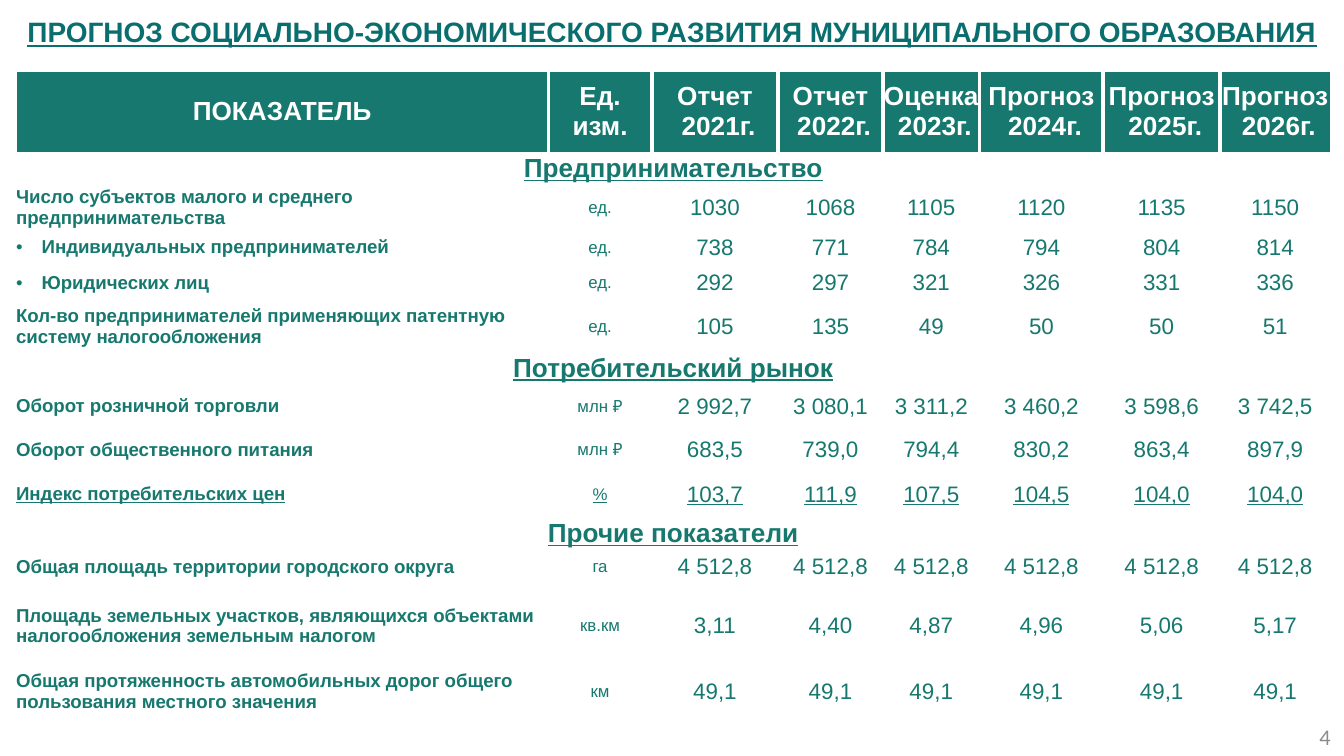
from dataclasses import dataclass

from lxml import etree
from pptx import Presentation, util as u
from pptx.dml.color import RGBColor
from pptx.enum import text as t
from pptx.oxml.ns import qn


@dataclass(frozen=True)
class Theme:
    face: str = "Arial"
    page_face: str = "Calibri"
    teal: str = "16786E"
    deep: str = "0A6E6E"
    white: str = "FFFFFF"
    grey: str = "8C8C8C"
    title: int = 15
    head: int = 14
    label: int = 10
    unit: int = 9
    value: int = 12


TH = Theme()
WIDE = 10
HIGH = WIDE * 9 / 16
PLAIN = "{2D5ABB26-0587-4C30-8999-92F81FD0307C}"  # table style: no style, no grid
MID, LEFT, RIGHT = t.PP_ALIGN.CENTER, t.PP_ALIGN.LEFT, t.PP_ALIGN.RIGHT

COLS = [3.96, 0.77, 0.94, 0.78, 0.72, 0.92, 0.87, 0.82]
HEADS = ["ПОКАЗАТЕЛЬ", "Ед. изм."] + [
    f"{kind}\n {year}г."
    for year, kind in enumerate(["Отчет"] * 2 + ["Оценка"] + ["Прогноз"] * 3, 2021)
]
HEAD_ROW, PART_ROW = 0.6, 0.25

# Each part: heading, then rows of (height, mark, label, unit, values);
# mark "•" is a bulleted row, "_" an underlined one.
PARTS = [
    ("Предпринимательство", [
        (0.3, "", "Число субъектов малого и среднего предпринимательства", "ед.",
         ["1030", "1068", "1105", "1120", "1135", "1150"]),
        (0.25, "•", "Индивидуальных предпринимателей", "ед.",
         ["738", "771", "784", "794", "804", "814"]),
        (0.28, "•", "Юридических лиц", "ед.",
         ["292", "297", "321", "326", "331", "336"]),
        (0.37, "", "Кол-во предпринимателей применяющих патентную систему налогообложения",
         "ед.", ["105", "135", "49", "50", "50", "51"]),
    ]),
    ("Потребительский рынок", [
        (0.32, "", "Оборот розничной торговли", "млн ₽",
         ["2 992,7", "3 080,1", "3 311,2", "3 460,2", "3 598,6", "3 742,5"]),
        (0.33, "", "Оборот общественного питания", "млн ₽",
         ["683,5", "739,0", "794,4", "830,2", "863,4", "897,9"]),
        (0.33, "_", "Индекс потребительских цен", "%",
         ["103,7", "111,9", "107,5", "104,5", "104,0", "104,0"]),
    ]),
    ("Прочие показатели", [
        (0.25, "", "Общая площадь территории городского округа", "га", ["4 512,8"] * 6),
        (0.63, "", "Площадь земельных участков, являющихся объектами "
         "налогообложения земельным налогом", "кв.км",
         ["3,11", "4,40", "4,87", "4,96", "5,06", "5,17"]),
        (0.35, "", "Общая протяженность автомобильных дорог общего пользования "
         "местного значения", "км", ["49,1"] * 6),
    ]),
]


def write(frame, words, size, color, align=MID, face=TH.face, bullet="", **marks):
    """Fill a text frame, one paragraph a line; marks are font attributes."""
    frame.word_wrap = True
    form = dict(size=u.Pt(size), name=face, **marks)
    for i, line in enumerate(words.split("\n")):
        para = frame.paragraphs[0] if i == 0 else frame.add_paragraph()
        para.alignment = align
        if bullet:
            props = para._p.get_or_add_pPr()
            props.set("marL", str(u.Inches(0.19)))
            props.set("indent", str(-u.Inches(0.19)))
            etree.SubElement(props, qn("a:buFont")).set("typeface", face)
            etree.SubElement(props, qn("a:buChar")).set("char", bullet)
        run = para.add_run()
        run.text = line
        for font in (para.font, run.font):
            for key, val in form.items():
                setattr(font, key, val)
            font.color.rgb = RGBColor.from_string(color)


def edge(cell, **sides):
    """Draw white cell borders, given as side=points in the order L, R, T."""
    props = cell._tc.get_or_add_tcPr()
    for side, width in sides.items():
        line = etree.SubElement(props, qn(f"a:ln{side}"), w=str(u.Pt(width)))
        fill = etree.SubElement(line, qn("a:solidFill"))
        etree.SubElement(fill, qn("a:srgbClr")).set("val", TH.white)


def put(cell, words, size, color=TH.teal, **form):
    cell.vertical_anchor = t.MSO_ANCHOR.MIDDLE
    for side in ("left", "right", "top", "bottom"):
        setattr(cell, f"margin_{side}", 0)
    write(cell.text_frame, words, size, color, **form)


def label(slide, box, words, anchor, *look, **form):
    shape = slide.shapes.add_textbox(*map(u.Inches, box))
    shape.text_frame.vertical_anchor = anchor
    write(shape.text_frame, words, *look, **form)


def head(grid):
    last = len(HEADS) - 1
    for i, words in enumerate(HEADS):
        cell = grid.cell(0, i)
        edge(cell, L=2.25 if i else 1, R=2.25 if i < last else 1, T=1)
        cell.fill.solid()
        cell.fill.fore_color.rgb = RGBColor.from_string(TH.teal)
        put(cell, words, TH.head, TH.white, bold=True)


def part(grid, row, title, lines):
    """Fill one heading and its lines from the given row; return the next row."""
    grid.cell(row, 0).merge(grid.cell(row, len(COLS) - 1))
    put(grid.cell(row, 0), title, TH.head, bold=True, underline=True)
    for row, (_, mark, name, unit, vals) in enumerate(lines, row + 1):
        under = mark == "_"
        put(grid.cell(row, 0), name, TH.label, align=LEFT, bold=True,
            underline=under, bullet="" if under else mark)
        for col, words in enumerate([unit] + vals, 1):
            put(grid.cell(row, col), words, TH.unit if col == 1 else TH.value,
                bold=False, underline=under)
    return row + 1


def table(slide, left, top):
    rows = [HEAD_ROW]
    for _, lines in PARTS:
        rows += [PART_ROW] + [line[0] for line in lines]
    box = map(u.Inches, (left, top, sum(COLS), sum(rows)))
    grid = slide.shapes.add_table(len(rows), len(COLS), *box).table
    grid.first_row = grid.horz_banding = False
    grid._tbl.tblPr.find(qn("a:tableStyleId")).text = PLAIN
    for col, width in zip(grid.columns, COLS):
        col.width = u.Inches(width)
    for row, height in zip(grid.rows, rows):
        row.height = u.Inches(height)
    for cell in grid.iter_cells():
        cell.fill.background()
    head(grid)
    row = 1
    for title, lines in PARTS:
        row = part(grid, row, title, lines)


def main():
    deck = Presentation()
    deck.slide_width, deck.slide_height = u.Inches(WIDE), u.Inches(HIGH)
    slide = deck.slides.add_slide(deck.slide_layouts[6])
    label(slide, (0.04, 0.06, WIDE - 0.08, 0.39),
          "ПРОГНОЗ СОЦИАЛЬНО-ЭКОНОМИЧЕСКОГО РАЗВИТИЯ МУНИЦИПАЛЬНОГО ОБРАЗОВАНИЯ",
          t.MSO_ANCHOR.TOP, TH.title, TH.deep, bold=True, underline=True)
    table(slide, 0.12, 0.53)
    label(slide, (7.67, 5.33, 2.33, 0.3), "4", t.MSO_ANCHOR.MIDDLE,
          TH.value, TH.grey, RIGHT, TH.page_face)
    deck.save("out.pptx")


if __name__ == "__main__":
    main()
